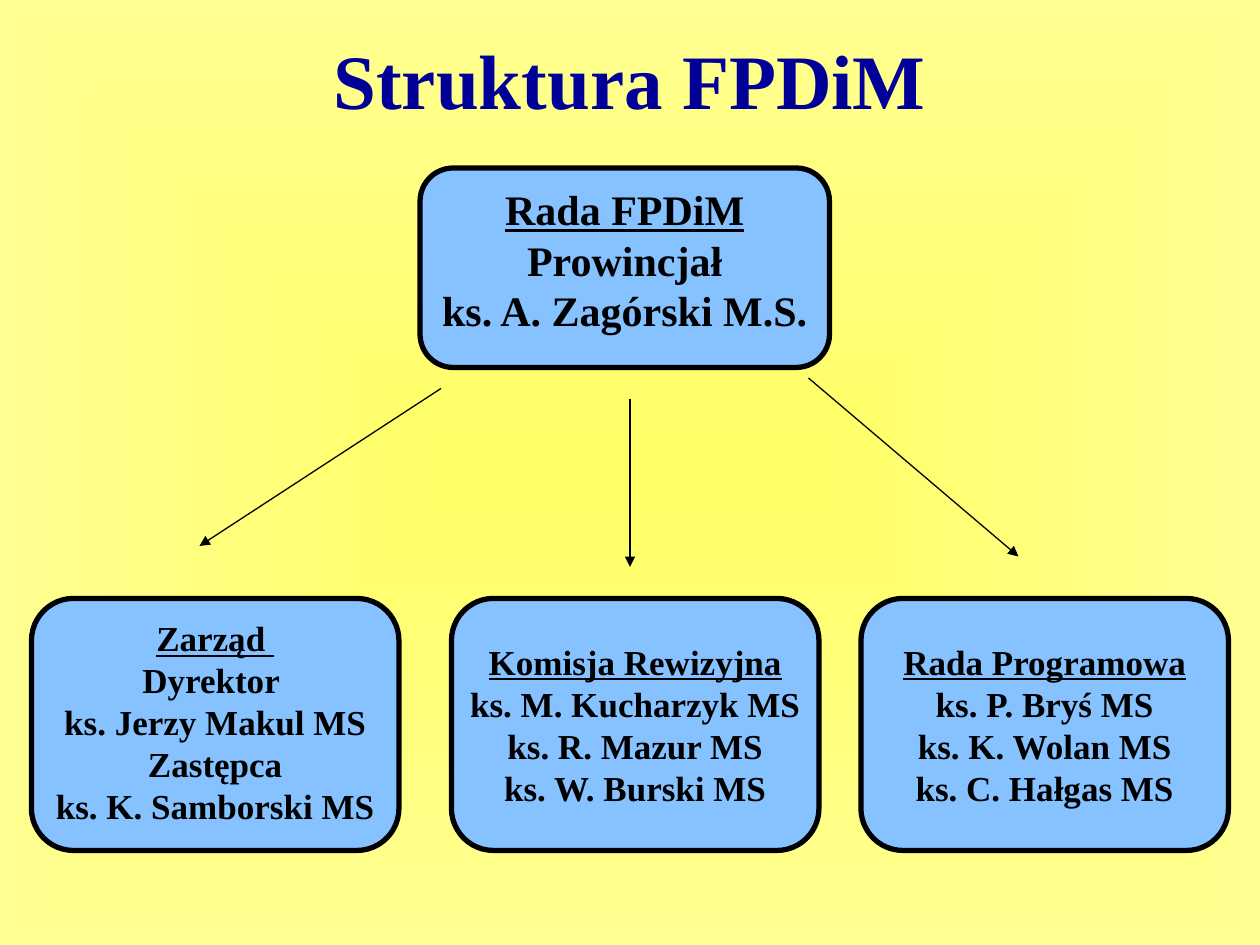
from dataclasses import dataclass

from lxml.etree import SubElement
from pptx import Presentation
from pptx.dml.color import RGBColor
from pptx.enum.shapes import MSO_CONNECTOR, MSO_SHAPE
from pptx.enum.text import MSO_ANCHOR, PP_ALIGN
from pptx.oxml.ns import qn
from pptx.util import Inches, Pt


@dataclass(frozen=True)
class Theme:
    font: str = "Times New Roman"
    title_color: str = "000099"
    ink: str = "000000"
    box_fill: str = "85C2FF"
    glow: str = "FFFF66"
    edge: str = "FFFF92"
    title_size: int = 44
    council_size: int = 24
    body_size: int = 20
    border: float = 3
    arrow: float = 0.75


THEME = Theme()
CELL = Inches(1) // 12  # the slide is a grid of 120 columns by 90 rows

# Lower row: left column, anchor, lines
BODIES = [
    (3, MSO_ANCHOR.TOP, ["Zarząd ", "Dyrektor ", "ks. Jerzy Makul MS",
                         "Zastępca", "ks. K. Samborski MS"]),
    (43, MSO_ANCHOR.MIDDLE, ["Komisja Rewizyjna", "ks. M. Kucharzyk MS",
                             "ks. R. Mazur MS", "ks. W. Burski MS"]),
    (82, MSO_ANCHOR.MIDDLE, ["Rada Programowa", "ks. P. Bryś MS",
                             "ks. K. Wolan MS", "ks. C. Hałgas MS"]),
]
COUNCIL = ["Rada FPDiM", "Prowincjał", "ks. A. Zagórski M.S."]
ARROWS = [(42, 37, 19, 52), (60, 38, 60, 54), (77, 36, 97, 53)]


def grid(*cells):
    return [cell * CELL for cell in cells]


def paint_background(page):
    """Fill the page with a gradient that spreads from its centre."""
    fill = page.background.fill
    fill.gradient()
    for stop, color in zip(fill.gradient_stops, (THEME.glow, THEME.edge)):
        stop.color.rgb = RGBColor.from_string(color)
    gradient = page.element.find(".//" + qn("a:gradFill"))
    gradient.remove(gradient.find(qn("a:lin")))
    spread = SubElement(gradient, qn("a:path"), {"path": "shape"})
    SubElement(spread, qn("a:fillToRect"), dict.fromkeys("ltrb", "50000"))


def write(frame, lines, *, size, color=THEME.ink, anchor=MSO_ANCHOR.MIDDLE,
          wrap=False, underline_first=False):
    """Write bold centred lines, one paragraph each."""
    frame.word_wrap = wrap
    frame.vertical_anchor = anchor
    for index, line in enumerate(lines):
        para = frame.add_paragraph() if index else frame.paragraphs[0]
        para.alignment = PP_ALIGN.CENTER
        span = para.add_run()
        span.text = line
        span.font.name = THEME.font
        span.font.size = Pt(size)
        span.font.bold = True
        span.font.underline = underline_first and index == 0
        span.font.color.rgb = RGBColor.from_string(color)


def add_title(page, text):
    box = page.shapes.add_textbox(*grid(9, 0, 102, 15))
    write(box.text_frame, [text], size=THEME.title_size,
          color=THEME.title_color, wrap=True)


def add_box(page, cells, lines, *, size, anchor):
    box = page.shapes.add_shape(MSO_SHAPE.ROUNDED_RECTANGLE, *grid(*cells))
    box.shadow.inherit = False
    box.fill.solid()
    box.fill.fore_color.rgb = RGBColor.from_string(THEME.box_fill)
    box.line.color.rgb = RGBColor.from_string(THEME.ink)
    box.line.width = Pt(THEME.border)
    write(box.text_frame, lines, size=size, anchor=anchor,
          underline_first=True)


def add_arrow(page, cells):
    arrow = page.shapes.add_connector(MSO_CONNECTOR.STRAIGHT, *grid(*cells))
    arrow.line.color.rgb = RGBColor.from_string(THEME.ink)
    arrow.line.width = Pt(THEME.arrow)
    properties = arrow.element.spPr
    SubElement(properties.find(qn("a:ln")), qn("a:tailEnd"),
               {"type": "triangle"})
    SubElement(properties, qn("a:effectLst"))


def main():
    deck = Presentation()
    deck.slide_width, deck.slide_height = grid(120, 90)
    page = deck.slides.add_slide(deck.slide_layouts[6])
    paint_background(page)
    add_title(page, "Struktura FPDiM")

    # Arrows from the council to the three bodies
    for cells in ARROWS:
        add_arrow(page, cells)

    # Council on top, bodies below
    add_box(page, (40, 16, 39, 19), COUNCIL,
            size=THEME.council_size, anchor=MSO_ANCHOR.TOP)
    for left, anchor, lines in BODIES:
        add_box(page, (left, 57, 35, 24), lines,
                size=THEME.body_size, anchor=anchor)

    deck.save("out.pptx")


if __name__ == "__main__":
    main()
